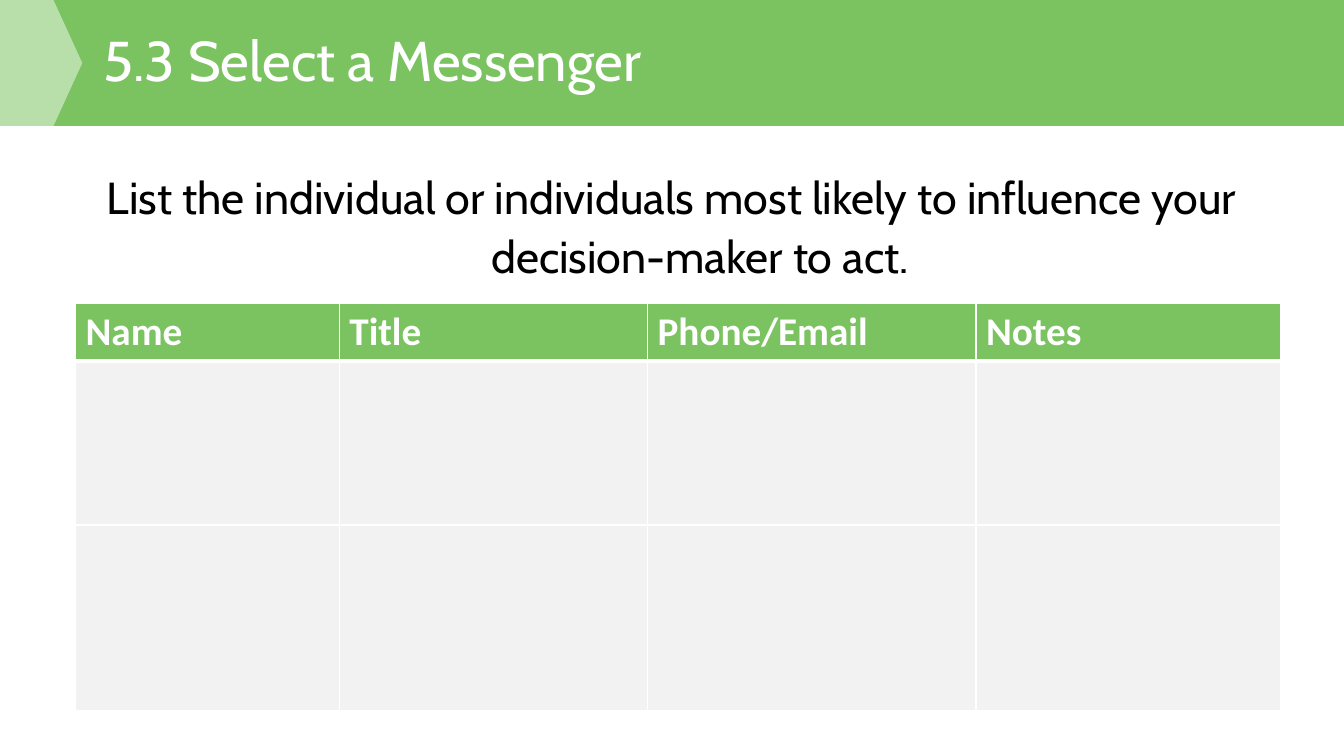
from lxml import etree
from pptx import Presentation
from pptx.dml.color import RGBColor
from pptx.enum.shapes import MSO_SHAPE
from pptx.enum.text import MSO_ANCHOR, MSO_AUTO_SIZE, PP_ALIGN
from pptx.oxml.ns import qn
from pptx.util import Inches, Pt

RECTANGLE, PENTAGON = MSO_SHAPE.RECTANGLE, MSO_SHAPE.PENTAGON
LEFT, CENTER = PP_ALIGN.LEFT, PP_ALIGN.CENTER
MIDDLE, TOP = MSO_ANCHOR.MIDDLE, MSO_ANCHOR.TOP
NO_AUTOFIT = MSO_AUTO_SIZE.NONE

GRID_COLUMNS, GRID_ROWS = 16, 9
GREEN, WHITE, BLACK, GRAY = "7AC360", "FFFFFF", "000000", "F2F2F2"


def color(value):
    return RGBColor.from_string(value)


class SlideBuilder:
    """Style and current slide; positions are grid columns and rows."""

    heading_font, table_font = "Cabin", "Calibri"

    def __init__(self, deck):
        self.page = deck.slides.add_slide(deck.slide_layouts[1])
        self.column = deck.slide_width / GRID_COLUMNS
        self.row = deck.slide_height / GRID_ROWS

    def across(self, count):
        return round(count * self.column)

    def down(self, count):
        return round(count * self.row)

    def area(self, left, top, width, height):
        return (self.across(left), self.down(top),
                self.across(width), self.down(height))

    def backdrop(self, kind, area, fill, layer, opacity=None):
        shape = self.page.shapes.add_shape(kind, *self.area(*area))
        shape.shadow.inherit = False
        shape.fill.solid()
        shape.fill.fore_color.rgb = color(fill)
        shape.line.fill.background()
        if opacity is not None:
            tint = shape.element.spPr.find(".//" + qn("a:srgbClr"))
            etree.SubElement(tint, qn("a:alpha"), val=str(opacity * 1000))
        # Place behind the placeholders, after the two group property elements
        shape.element.getparent().insert(2 + layer, shape.element)
        return shape

    def add_span(self, para, text, font, size, ink, bold=False):
        span = para.add_run()
        span.text = text
        span.font.name, span.font.size = font, Pt(size)
        span.font.bold, span.font.color.rgb = bold, color(ink)

    def placeholder(self, box, area, text, size, ink, align, anchor, spacing):
        box.left, box.top, box.width, box.height = self.area(*area)
        frame = box.text_frame
        frame.word_wrap, frame.auto_size = True, NO_AUTOFIT
        frame.vertical_anchor = anchor
        para = frame.paragraphs[0]
        para.alignment, para.line_spacing = align, spacing
        para.space_before = Pt(0)
        self.add_span(para, text, self.heading_font, size, ink)
        return para

    def hanging_indent(self, para, inches):
        properties = para._p.get_or_add_pPr()
        properties.set("marL", str(Inches(inches)))
        properties.set("indent", str(-Inches(inches)))
        etree.SubElement(properties, qn("a:buNone"))

    def cell_borders(self, cell, widths):
        properties = cell._tc.get_or_add_tcPr()
        for index, (side, width) in enumerate(widths.items()):
            line = etree.Element(qn("a:" + side), w=str(Pt(width)))
            fill = etree.SubElement(line, qn("a:solidFill"))
            etree.SubElement(fill, qn("a:srgbClr"), val=WHITE)
            properties.insert(index, line)

    def form_table(self, left, top, headers, widths, heights):
        area = self.area(left, top, sum(widths), sum(heights))
        table = self.page.shapes.add_table(
            len(heights), len(widths), *area).table
        for column, width in zip(table.columns, widths):
            column.width = self.across(width)
        for row_index, (row, height) in enumerate(zip(table.rows, heights)):
            row.height = self.down(height)
            for column_index, cell in enumerate(row.cells):
                is_header = row_index == 0
                cell.fill.solid()
                cell.fill.fore_color.rgb = color(GREEN if is_header else GRAY)
                self.cell_borders(cell, {
                    "lnL": 1, "lnR": 1,
                    "lnT": 3 if row_index == 1 else 1,
                    "lnB": 3 if is_header else 1})
                if is_header:
                    self.add_span(cell.text_frame.paragraphs[0],
                                  headers[column_index], self.table_font,
                                  28, WHITE, bold=True)


def main():
    deck = Presentation()
    deck.slide_width, deck.slide_height = Inches(13.33), Inches(7.5)
    builder = SlideBuilder(deck)
    title, body = builder.page.placeholders

    # Header band with its pointed tab
    builder.backdrop(RECTANGLE, (0, 0, GRID_COLUMNS, 1.5), GREEN, layer=0)
    tab = builder.backdrop(PENTAGON, (0, 0, 0.98, 1.5), WHITE, layer=1,
                           opacity=47)
    tab.adjustments[0] = 0.35

    # Title and instruction
    builder.placeholder(title, (1.11, 0.24, 12.7, 1.03),
                        "5.3 Select a Messenger", 40, WHITE, LEFT, MIDDLE, 0.9)
    instruction = builder.placeholder(
        body, (1.1, 1.9, 13.8, 6.2),
        "List the individual or individuals most likely to influence your "
        "decision-maker to act.", 32, BLACK, CENTER, TOP, 1.1)
    builder.hanging_indent(instruction, 0.56)

    # Messenger form
    builder.form_table(0.9, 3.61, ["Name", "Title", "Phone/Email", "Notes"],
                       widths=[3.14, 3.67, 3.91, 3.62],
                       heights=[0.67, 1.95, 2.21])
    deck.save("out.pptx")


if __name__ == "__main__":
    main()
